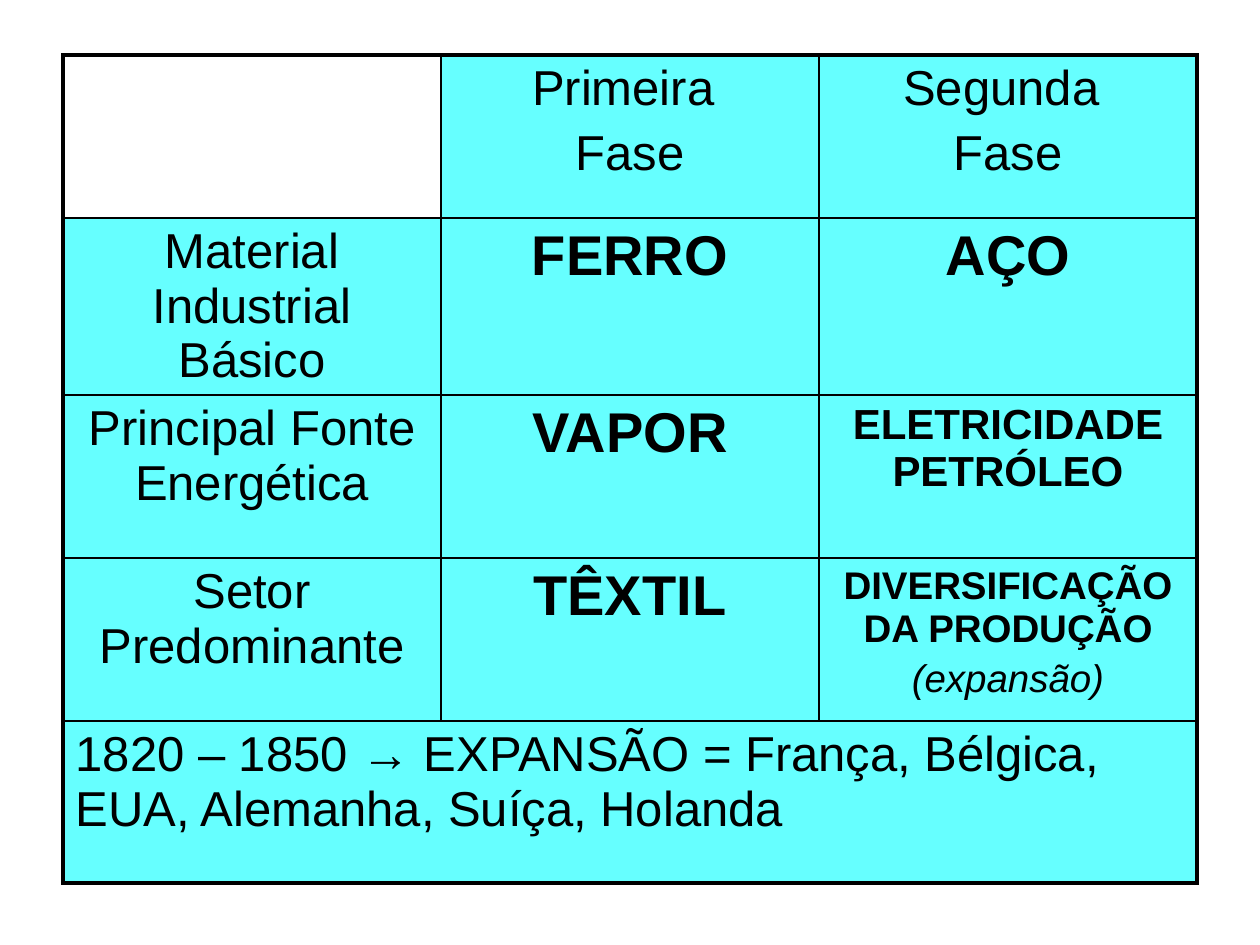
from dataclasses import dataclass

from lxml import etree
from pptx import Presentation
from pptx import util as u
from pptx.dml.color import RGBColor
from pptx.enum import text
from pptx.oxml.ns import qn


@dataclass(frozen=True)
class Theme:
    font: str = "Arial"
    ink: str = "000000"
    cell: str = "66FFFF"
    label: int = 28
    key: int = 32
    medium: int = 24
    small: int = 22
    outer: float = 2.25
    inner: float = 1


THEME = Theme()
PX = u.Inches(1) / 126

# Content: each cell is a list of (text, size, style) paragraphs
LABEL, KEY, MEDIUM, SMALL = THEME.label, THEME.key, THEME.medium, THEME.small
ROWS = [
    [[],
     [("Primeira ", LABEL, ""), ("Fase", LABEL, "")],
     [("Segunda ", LABEL, ""), ("Fase", LABEL, "")]],
    [[("Material Industrial Básico", LABEL, "")],
     [("FERRO", KEY, "bold")],
     [("AÇO", KEY, "bold")]],
    [[("Principal Fonte Energética", LABEL, "")],
     [("VAPOR", KEY, "bold")],
     [("ELETRICIDADE PETRÓLEO", MEDIUM, "bold")]],
    [[("Setor Predominante", LABEL, "")],
     [("TÊXTIL", KEY, "bold")],
     [("DIVERSIFICAÇÃO DA PRODUÇÃO", SMALL, "bold"),
      ("(expansão)", SMALL, "italic")]],
    [[("1820 – 1850 → EXPANSÃO = França, Bélgica, EUA, Alemanha, Suíça, Holanda",
       LABEL, "")], [], []],
]
LEFT, TOP, COLUMN = 63, 55, 378
HEIGHTS = [163, 177, 163, 163, 162]
LAST_ROW, LAST_COLUMN = len(ROWS) - 1, len(ROWS[0]) - 1


def px(length):
    return u.Emu(round(length * PX))


def write(cell, paragraphs, align):
    for index, (words, size, style) in enumerate(paragraphs):
        frame = cell.text_frame
        para = frame.add_paragraph() if index else frame.paragraphs[0]
        para.text = words
        para.alignment = align
        para.space_before = u.Pt(size * 0.2 if index else 0)
        font = para.font
        font.name, font.size = THEME.font, u.Pt(size)
        font.bold, font.italic = style == "bold", style == "italic"
        font.color.rgb = RGBColor.from_string(THEME.ink)


def add_borders(cell, outer_sides):
    props = cell._tc.get_or_add_tcPr()
    for side in "LRTB":
        width = THEME.outer if side in outer_sides else THEME.inner
        line = etree.SubElement(props, qn(f"a:ln{side}"), w=str(u.Pt(width)))
        fill = etree.SubElement(line, qn("a:solidFill"))
        etree.SubElement(fill, qn("a:srgbClr"), val=THEME.ink)


def paint(cell, filled):
    if filled:
        cell.fill.solid()
        cell.fill.fore_color.rgb = RGBColor.from_string(THEME.cell)
    else:
        cell.fill.background()


def main():
    deck = Presentation()
    deck.slide_width, deck.slide_height = u.Inches(10), u.Inches(7.5)
    page = deck.slides.add_slide(deck.slide_layouts[6])

    # Table grid, with the last row merged into one note
    table = page.shapes.add_table(
        len(ROWS), len(ROWS[0]), px(LEFT), px(TOP),
        px(COLUMN * len(ROWS[0])), px(sum(HEIGHTS))).table
    table.first_row = table.horz_banding = False
    for column in table.columns:
        column.width = px(COLUMN)
    for row, height in zip(table.rows, HEIGHTS):
        row.height = px(height)
    table.cell(LAST_ROW, 0).merge(table.cell(LAST_ROW, LAST_COLUMN))

    # Cell text, borders and fills
    for r, row in enumerate(ROWS):
        is_note = r == LAST_ROW
        align = text.PP_ALIGN.LEFT if is_note else text.PP_ALIGN.CENTER
        for c, paragraphs in enumerate(row):
            cell = table.cell(r, c)
            write(cell, paragraphs, align)
            edges = {"L": c == 0, "R": c == LAST_COLUMN or is_note,
                     "T": r == 0, "B": is_note}
            add_borders(cell, [side for side, outer in edges.items() if outer])
            paint(cell, filled=(r, c) != (0, 0))

    deck.save("out.pptx")


if __name__ == "__main__":
    main()
